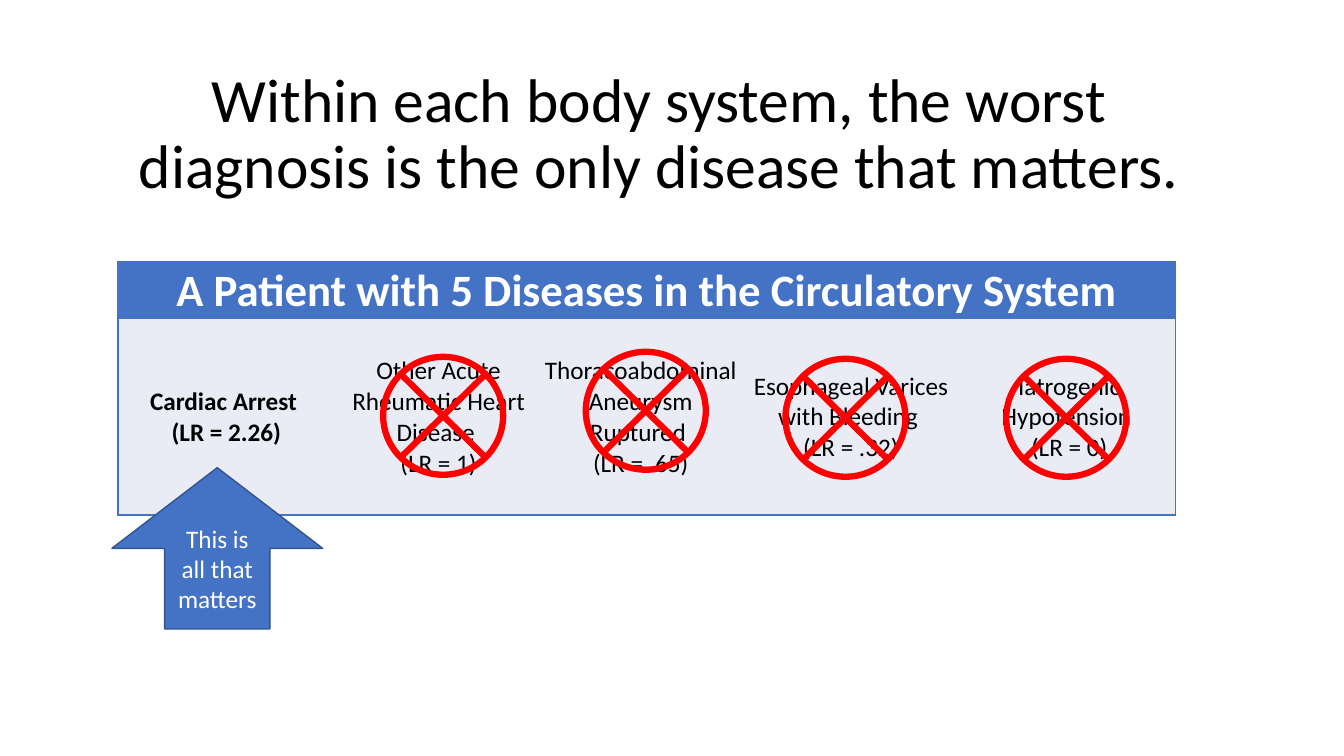
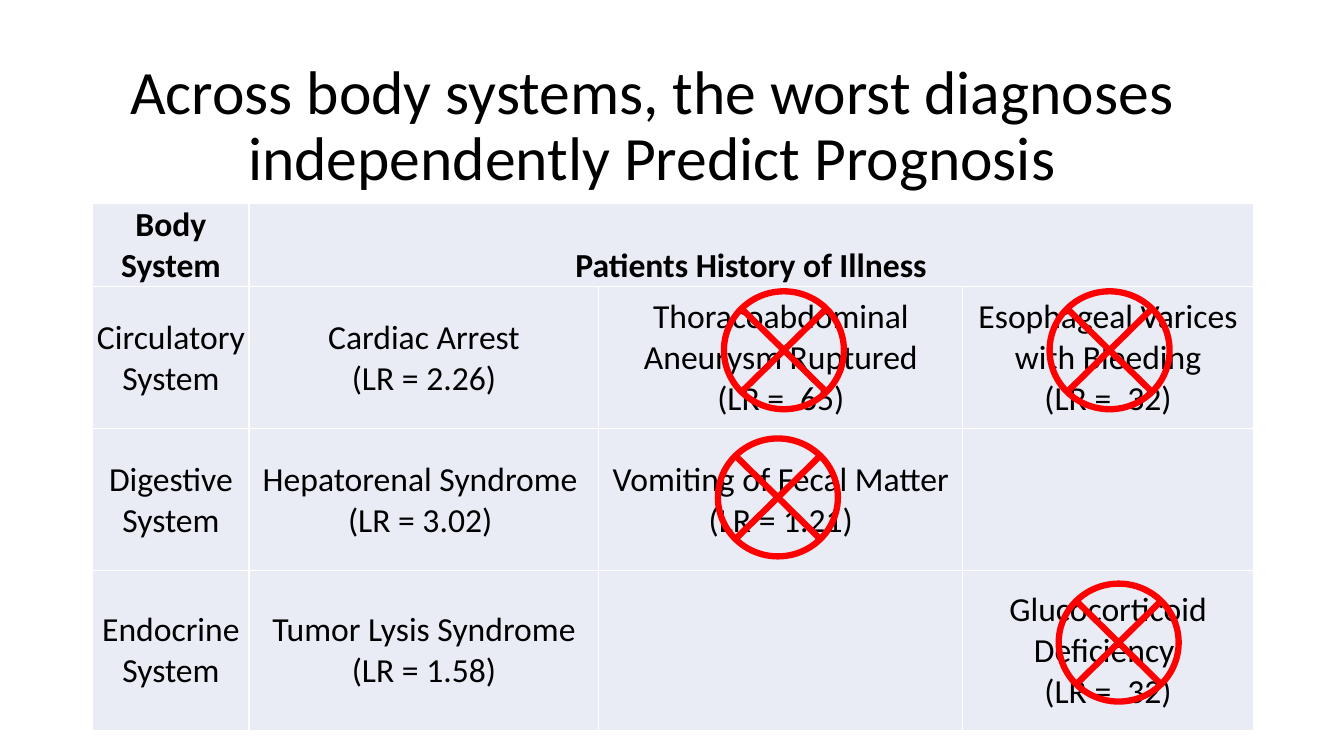
from dataclasses import dataclass

from lxml import etree
from pptx import Presentation
from pptx.dml.color import RGBColor
from pptx.enum.shapes import MSO_SHAPE
from pptx.enum.text import MSO_ANCHOR, MSO_AUTO_SIZE, PP_ALIGN
from pptx.oxml.ns import qn
from pptx.util import Inches, Pt

CENTER = PP_ALIGN.CENTER
MIDDLE, BOTTOM = MSO_ANCHOR.MIDDLE, MSO_ANCHOR.BOTTOM
CROSS, UP_ARROW = MSO_SHAPE.FLOWCHART_SUMMING_JUNCTION, MSO_SHAPE.UP_ARROW
PLAIN_TABLE = "{2D5ABB26-0587-4C30-8999-92F81FD0307C}"
TITLE_ONLY = 5


@dataclass(frozen=True)
class Theme:
    font: str = "Calibri"
    text: str = "000000"
    white: str = "FFFFFF"
    blue: str = "4472C4"
    dark_blue: str = "325491"
    pale: str = "E9EBF5"
    red: str = "FF0000"
    title_size: int = 44
    banner_size: int = 32
    grid_size: int = 24
    small_size: int = 18
    thin: int = 1
    cross_line: float = 4.5


T = Theme()
TITLE_SIZE = (11.5, 1.45)
CROSS_SIZE = (1.19, 1.17)

BANNER = dict(size=T.banner_size, color=T.white, bold=True, fill=T.blue, anchor=BOTTOM)
SMALL = dict(size=T.small_size)
GRID = dict(size=T.grid_size)
GRID_HEAD = dict(size=T.grid_size, bold=True, anchor=BOTTOM)

# Each cell is (text, format); None continues the merged cell to its left.
SLIDES = [
    dict(
        title="Within each body system, the worst diagnosis is the only disease that matters.",
        title_at=(0.79, 0.62),
        table_at=(1.17, 2.6),
        cols=[2.15, 2.06, 1.95, 2.22, 2.11],
        rows=[0.56, 1.95],
        cells=[
            [("A Patient with 5 Diseases in the Circulatory System", BANNER)] + [None] * 4,
            [
                ("Cardiac Arrest \n(LR = 2.26)", dict(SMALL, bold=True)),
                ("Other Acute Rheumatic Heart Disease \n(LR = 1)", SMALL),
                ("Thoracoabdominal Aneurysm Ruptured \n(LR = .65)", SMALL),
                ("Esophageal Varices with Bleeding \n(LR = .32)", SMALL),
                ("Iatrogenic Hypotension \n(LR = 0)", SMALL),
            ],
        ],
        border=T.blue,
        inner_lines=False,
        crosses=[(3.8, 3.54), (9.98, 3.56), (7.79, 3.56), (5.81, 3.49)],
        arrow=("This is all that matters", (1.11, 4.64, 2.09, 1.6)),
    ),
    dict(
        title="Across body systems, the worst diagnoses independently Predict Prognosis",
        title_at=(0.72, 0.54),
        table_at=(0.92, 2.02),
        cols=[1.55, 3.47, 3.61, 2.88],
        rows=[0.81, 1.41, 1.41, 1.58],
        cells=[
            [("Body System", GRID_HEAD), ("Patients History of Illness", GRID_HEAD), None, None],
            [
                ("Circulatory System", GRID),
                ("Cardiac Arrest\n(LR = 2.26)", GRID),
                ("Thoracoabdominal Aneurysm Ruptured\n(LR = .65)", GRID),
                ("Esophageal Varices with Bleeding\n(LR = .32)", GRID),
            ],
            [
                ("Digestive System", GRID),
                ("Hepatorenal Syndrome \n(LR = 3.02) ", GRID),
                ("Vomiting of Fecal Matter\n(LR = 1.21)", GRID),
                ("", GRID),
            ],
            [
                ("Endocrine System", GRID),
                ("Tumor Lysis Syndrome\n(LR = 1.58)", GRID),
                ("", GRID),
                ("Glucocorticoid Deficiency \n(LR = .32)", GRID),
            ],
        ],
        border=T.white,
        inner_lines=True,
        crosses=[(10.5, 5.79), (7.12, 4.35), (10.41, 2.89), (7.18, 2.89)],
        arrow=None,
    ),
]


def rgb(color):
    return RGBColor.from_string(color)


def inches(*values):
    return [Inches(v) for v in values]


def write(tf, text, size, color=T.text, bold=False, spacing=1.0):
    tf.text = text
    for p in tf.paragraphs:
        p.alignment, p.line_spacing = CENTER, spacing
        for name, value in dict(name=T.font, size=Pt(size), bold=bold).items():
            setattr(p.font, name, value)
        p.font.color.rgb = rgb(color)
        for r in p.runs:
            r.font.size, r.font.bold, r.font.name = Pt(size), bold, T.font
            r.font.color.rgb = rgb(color)


def add_title(s, text, at):
    title = s.shapes.title
    box = inches(*at, *TITLE_SIZE)
    for name, value in zip(("left", "top", "width", "height"), box):
        setattr(title, name, value)
    tf = title.text_frame
    for name, value in dict(word_wrap=True, auto_size=MSO_AUTO_SIZE.NONE,
                            vertical_anchor=MIDDLE).items():
        setattr(tf, name, value)
    write(tf, text, T.title_size, spacing=0.9)


def set_borders(cell, color, sides):
    """Draw the given sides (from L, R, T, B, in that order) and clear the others."""
    tc_pr = cell._tc.get_or_add_tcPr()
    for i, side in enumerate("LRTB"):
        ln = etree.Element(qn(f"a:ln{side}"), w=str(Pt(T.thin)))
        if side in sides:
            fill = etree.SubElement(ln, qn("a:solidFill"))
            etree.SubElement(fill, qn("a:srgbClr"), val=color)
        else:
            etree.SubElement(ln, qn("a:noFill"))
        tc_pr.insert(i, ln)


def format_cell(cell, text, size, color=T.text, bold=False, fill=T.pale, anchor=MIDDLE):
    margins = dict(margin_left=0.01, margin_right=0.01, margin_top=0.01, margin_bottom=0)
    for name, value in margins.items():
        setattr(cell, name, Inches(value))
    cell.vertical_anchor = anchor
    cell.fill.solid()
    cell.fill.fore_color.rgb = rgb(fill)
    write(cell.text_frame, text, size, color, bold)


def add_grid(s, data):
    cols, rows, cells = data["cols"], data["rows"], data["cells"]
    box = inches(*data["table_at"], sum(cols), sum(rows))
    frame = s.shapes.add_table(len(rows), len(cols), *box)
    table = frame.table
    table.first_row = table.horz_banding = False
    table._tbl.tblPr.find(qn("a:tableStyleId")).text = PLAIN_TABLE
    for col, width in zip(table.columns, cols):
        col.width = Inches(width)
    for row, height in zip(table.rows, rows):
        row.height = Inches(height)

    for i, line in enumerate(cells):
        starts = [j for j, content in enumerate(line) if content]
        for j, end in zip(starts, starts[1:] + [len(cols)]):
            cell = table.cell(i, j)
            if end - j > 1:
                cell.merge(table.cell(i, end - 1))
            text, look = line[j]
            format_cell(cell, text, **look)
            inner = data["inner_lines"]
            drawn = dict(L=inner or j == 0, R=inner or end == len(cols), T=True, B=True)
            set_borders(cell, data["border"], [k for k, on in drawn.items() if on])


def add_outlined(s, kind, box, line, width):
    sp = s.shapes.add_shape(kind, *inches(*box))
    sp.shadow.inherit = False
    sp.fill.background()
    sp.line.color.rgb = rgb(line)
    sp.line.width = Pt(width)
    return sp


def add_arrow(s, text, box):
    sp = add_outlined(s, UP_ARROW, box, T.dark_blue, T.thin)
    sp.fill.solid()
    sp.fill.fore_color.rgb = rgb(T.blue)
    tf = sp.text_frame
    tf.word_wrap, tf.vertical_anchor = True, MIDDLE
    write(tf, text, T.small_size, T.white)


def main():
    prs = Presentation()
    prs.slide_width, prs.slide_height = inches(13.33, 7.5)
    for data in SLIDES:
        s = prs.slides.add_slide(prs.slide_layouts[TITLE_ONLY])
        add_title(s, data["title"], data["title_at"])
        add_grid(s, data)
        for at in data["crosses"]:
            add_outlined(s, CROSS, (*at, *CROSS_SIZE), T.red, T.cross_line)
        if data["arrow"]:
            add_arrow(s, *data["arrow"])
    prs.save("out.pptx")


if __name__ == "__main__":
    main()
